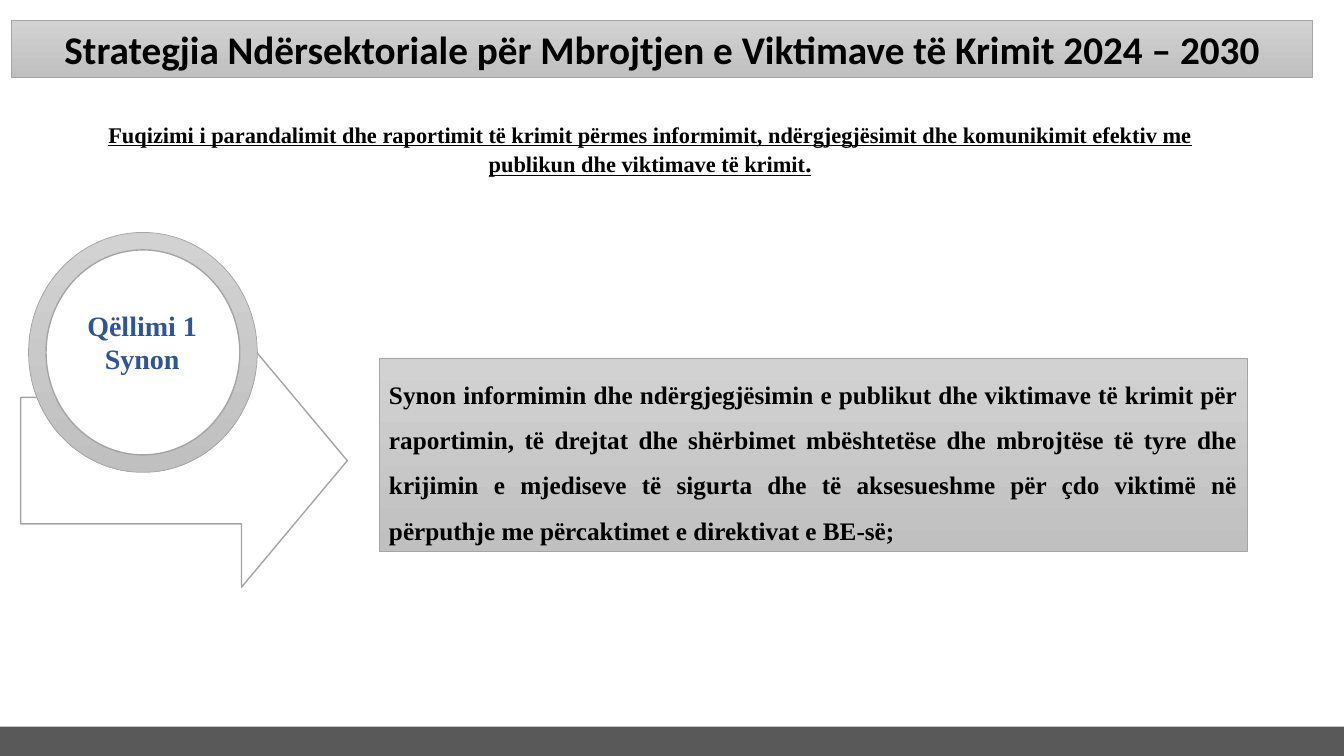
from pptx import Presentation
from pptx.dml.color import RGBColor
from pptx.enum.shapes import MSO_SHAPE
from pptx.enum.text import MSO_ANCHOR, PP_ALIGN
from pptx.util import Pt

BLACK = RGBColor(0x00, 0x00, 0x00)
WHITE = RGBColor(0xFF, 0xFF, 0xFF)
BLUE = RGBColor(0x2F, 0x55, 0x97)
OUTLINE = RGBColor(0xA5, 0xA5, 0xA5)
LIGHT_GREY = RGBColor(0xD2, 0xD2, 0xD2)
MID_GREY = RGBColor(0xC0, 0xC0, 0xC0)
DARK_GREY = RGBColor(0x59, 0x59, 0x59)
SERIF = "Times New Roman"
SLIDE_WIDTH, SLIDE_HEIGHT = 960, 540


def add_shape(slide, kind, box, fill=None, line_width=None):
    """Add a shape with a solid fill, or the grey gradient when none is given."""
    shape = slide.shapes.add_shape(kind, *map(Pt, box))
    shape.shadow.inherit = False
    if fill is None:
        shape.fill.gradient()
        shape.fill.gradient_angle = 270
        for stop, color in zip(shape.fill.gradient_stops, (LIGHT_GREY, MID_GREY)):
            stop.color.rgb = color
    else:
        shape.fill.solid()
        shape.fill.fore_color.rgb = fill
    if line_width is None:
        shape.line.fill.background()
    else:
        shape.line.color.rgb = OUTLINE
        shape.line.width = Pt(line_width)
    return shape


def write(shape, paragraphs, font_name, color=BLACK, align=PP_ALIGN.CENTER,
          underline=False, spacing=None, anchor=MSO_ANCHOR.MIDDLE):
    """Write bold paragraphs, each a list of (text, size) runs."""
    frame = shape.text_frame
    frame.word_wrap = True
    frame.vertical_anchor = anchor
    for index, runs in enumerate(paragraphs):
        paragraph = frame.add_paragraph() if index else frame.paragraphs[0]
        paragraph.alignment = align
        if spacing:
            paragraph.line_spacing = spacing
        for text, size in runs:
            run = paragraph.add_run()
            run.text = text
            run.font.name = font_name
            run.font.size = Pt(size)
            run.font.bold = True
            run.font.underline = underline
            run.font.color.rgb = color


def add_footer(slide, box):
    """Draw the dark band along the bottom edge."""
    add_shape(slide, MSO_SHAPE.RECTANGLE, box, DARK_GREY)


def add_title(slide, box):
    """Draw the title banner."""
    banner = add_shape(slide, MSO_SHAPE.RECTANGLE, box, line_width=0.5)
    title = "Strategjia Ndërsektoriale për Mbrojtjen e Viktimave të Krimit 2024 – 2030"
    write(banner, [[(title, 28)]], "Calibri")


def add_subtitle(slide, box):
    """Write the underlined goal statement."""
    goal = ("Fuqizimi i parandalimit dhe raportimit të krimit përmes informimit, "
            "ndërgjegjësimit dhe komunikimit efektiv me publikun dhe viktimave të krimit")
    write(slide.shapes.add_textbox(*map(Pt, box)), [[(goal, 16), (".", 18)]],
          SERIF, underline=True, anchor=MSO_ANCHOR.TOP)


def add_goal_badge(slide, box):
    """Draw the arrow with the ringed goal label over its upper left part."""
    left, top, width, height = box
    arrow_height = 180.7
    arrow = add_shape(slide, MSO_SHAPE.RIGHT_ARROW,
                      (left, top + height - arrow_height, width, arrow_height), WHITE, 1)
    arrow.adjustments[0] = 0.5
    arrow.adjustments[1] = 0.418

    ring_width, ring_height, band = 163.4, 171.4, 12.5
    ring_left = left + 5.6
    add_shape(slide, MSO_SHAPE.OVAL, (ring_left, top, ring_width, ring_height), line_width=0.5)
    add_shape(slide, MSO_SHAPE.OVAL,
              (ring_left + band, top + band, ring_width - 2 * band, ring_height - 2 * band),
              WHITE, 1)

    label = slide.shapes.add_textbox(Pt(left + 18.4), Pt(top + 50.7), Pt(136.8), Pt(55.4))
    write(label, [[("Qëllimi 1", 20)], [("Synon", 20)]], SERIF, BLUE,
          anchor=MSO_ANCHOR.TOP)


def add_description(slide, box):
    """Draw the panel that explains the goal."""
    panel = add_shape(slide, MSO_SHAPE.RECTANGLE, box, line_width=0.5)
    aim = ("Synon informimin dhe ndërgjegjësimin e publikut dhe viktimave të krimit për "
           "raportimin, të drejtat dhe shërbimet mbështetëse dhe mbrojtëse të tyre dhe "
           "krijimin e mjediseve të sigurta dhe të aksesueshme për çdo viktimë në "
           "përputhje me përcaktimet e direktivat e BE-së;")
    write(panel, [[(aim, 18)]], SERIF, align=PP_ALIGN.JUSTIFY, spacing=1.5)


def main():
    """Build and save the slide."""
    presentation = Presentation()
    presentation.slide_width = Pt(SLIDE_WIDTH)
    presentation.slide_height = Pt(SLIDE_HEIGHT)
    slide = presentation.slides.add_slide(presentation.slide_layouts[6])
    add_footer(slide, (0, 519, SLIDE_WIDTH, 21))
    add_goal_badge(slide, (14.8, 166, 233.3, 253.4))
    add_title(slide, (8, 14.5, 929.5, 41))
    add_subtitle(slide, (61.2, 82.8, 806.4, 48.2))
    add_description(slide, (270.8, 255.8, 620, 138))
    presentation.save("out.pptx")


if __name__ == "__main__":
    main()
